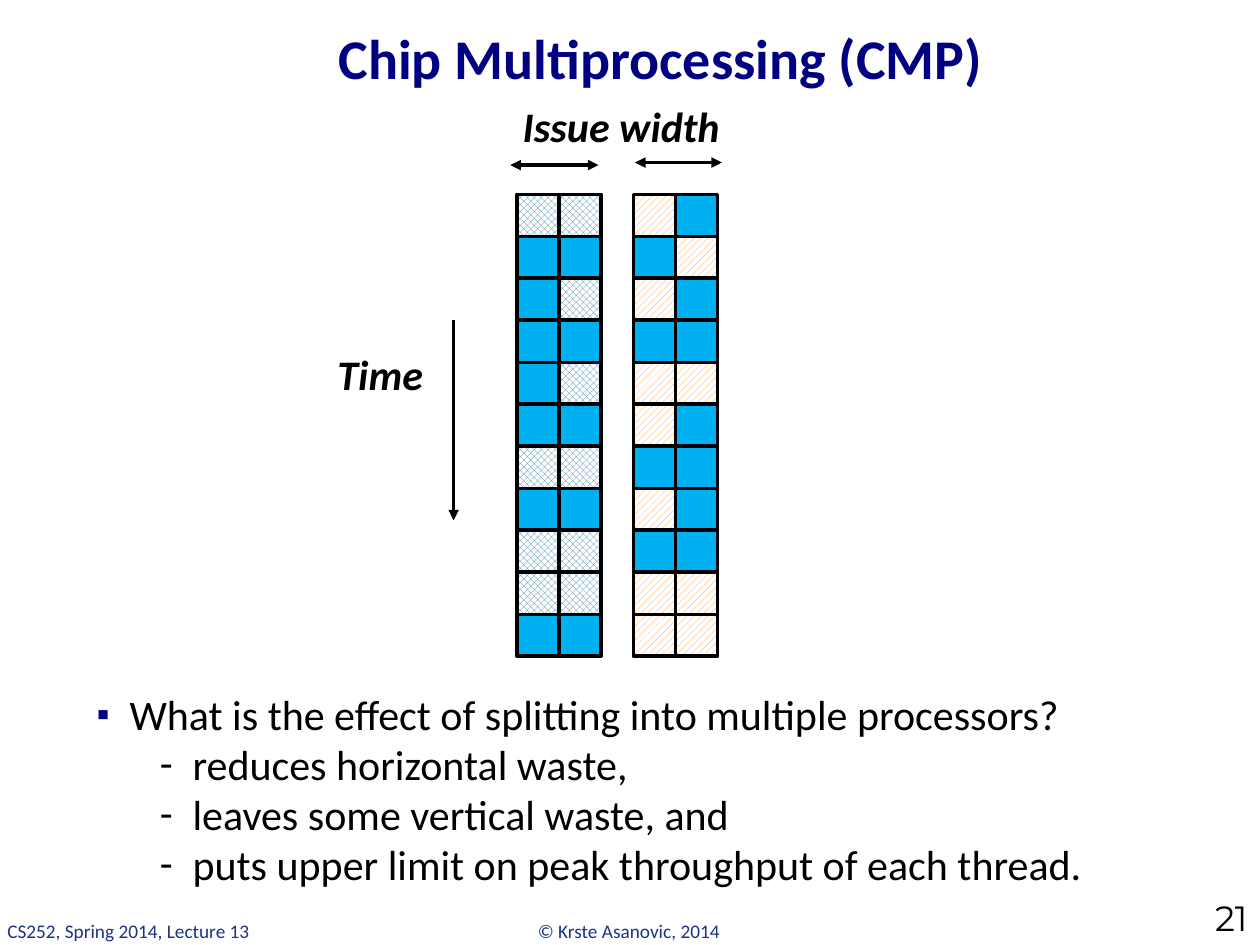
from dataclasses import dataclass

import lxml.etree
import pptx
import pptx.dml.color
import pptx.enum.dml
import pptx.enum.shapes
import pptx.enum.text
import pptx.oxml.ns
import pptx.util

"""Build the chip multiprocessing slide, with positions as percentages of the slide."""

WIDTH, HEIGHT = pptx.util.Inches(10), pptx.util.Inches(7.5)
CELL = pptx.util.Inches(1 / 3)
COLORS = {"title": "000081", "bullet": "000080", "footer": "1B3384", "ink": "000000",
          "busy": "00B0F0", "first": "2C7C9F", "second": "FF9933", "paper": "FFFFFF"}
ALIGN = pptx.enum.text.PP_ALIGN
ANCHOR = pptx.enum.text.MSO_ANCHOR
PATTERN = pptx.enum.dml.MSO_PATTERN


@dataclass
class Box:
    left: float
    top: float
    width: float
    height: float


@dataclass
class Style:
    size: float
    color: str = "ink"
    font: str = "Calibri"
    bold: bool = False
    italic: bool = False


@dataclass
class Label:
    text: str
    box: Box
    style: Style
    align: ALIGN = ALIGN.LEFT
    anchor: ANCHOR = ANCHOR.TOP
    wrap: bool = True


@dataclass
class Core:
    left: float
    top: float
    idle_color: str
    idle_pattern: PATTERN
    rows: str


@dataclass
class Arrow:
    start: tuple[float, float]
    end: tuple[float, float]
    ends: tuple[str, ...]


@dataclass
class Bullet:
    text: str
    indent: float
    level: int = 0
    mark: str = "-"
    color: str = "ink"
    size: int = 100


FOOTER = Style(11, "footer")
CAPTION = Style(24, bold=True, italic=True)
BODY = Style(24)
TITLE = Label("Chip Multiprocessing (CMP)", Box(13.3, 1.07, 78.3, 10),
              Style(32, "title", bold=True), ALIGN.CENTER, ANCHOR.MIDDLE)
LABELS = [
    Label("© Krste Asanovic, 2014", Box(41.7, 96.67, 16.7, 3.87), FOOTER, wrap=False),
    Label("CS252, Spring 2014, Lecture 13", Box(-0.4, 96.67, 21.4, 3.87), FOOTER, wrap=False),
    Label("21", Box(90.8, 96.53, 9.2, 3.47), Style(20, font="Montserrat"),
          ALIGN.RIGHT, ANCHOR.BOTTOM),
    Label("Issue width", Box(40.5, 10, 19.5, 6.67), CAPTION),
    Label("Time", Box(25.8, 36.27, 9.7, 6.67), CAPTION, wrap=False),
]
CORES = [
    Core(41.03, 20.56, "first", PATTERN.SOLID_DIAMOND, ".. ## #. ## #. ## .. ## .. .. ##"),
    Core(50.28, 20.56, "second", PATTERN.WIDE_UPWARD_DIAGONAL,
         ".# #. .# ## .. .# ## .# ## .. .."),
]
ARROWS = [
    Arrow((40.5, 17.47), (47.5, 17.47), ("headEnd", "tailEnd")),
    Arrow((50.4, 17.2), (57.3, 17.2), ("headEnd", "tailEnd")),
    Arrow((36, 33.87), (36, 55.07), ("tailEnd",)),
]
BODY_BOX = Box(6.7, 72.27, 85.8, 18.8)
BULLETS = [
    Bullet("What is the effect of splitting into multiple processors?", 0.26,
           mark="▪", color="bullet", size=85),
    Bullet("reduces horizontal waste,", 0.76, 1),
    Bullet("leaves some vertical waste, and", 0.76, 1),
    Bullet("puts upper limit on peak throughput of each thread.", 0.76, 1),
]


def rgb(name: str) -> pptx.dml.color.RGBColor:
    return pptx.dml.color.RGBColor.from_string(COLORS[name])


def across(share: float) -> int:
    return round(WIDTH * share / 100)


def down(share: float) -> int:
    return round(HEIGHT * share / 100)


def place(box: Box) -> tuple[int, int, int, int]:
    return across(box.left), down(box.top), across(box.width), down(box.height)


def add_child(parent, tag: str, **attributes: str):
    return lxml.etree.SubElement(parent, pptx.oxml.ns.qn(f"a:{tag}"), attributes)


def format_runs(paragraph, style: Style) -> None:
    for run in paragraph.runs:
        run.font.size = pptx.util.Pt(style.size)
        run.font.name = style.font
        run.font.bold = style.bold
        run.font.italic = style.italic
        run.font.color.rgb = rgb(style.color)


def write_label(shape, label: Label) -> None:
    frame = shape.text_frame
    frame.text = label.text
    frame.word_wrap = label.wrap
    frame.auto_size = pptx.enum.text.MSO_AUTO_SIZE.NONE
    frame.vertical_anchor = label.anchor
    frame.paragraphs[0].alignment = label.align
    format_runs(frame.paragraphs[0], label.style)


def write_title(slide, label: Label) -> None:
    title = slide.shapes.title
    title.left, title.top, title.width, title.height = place(label.box)
    write_label(title, label)


def draw_core(slide, core: Core) -> None:
    for row, slots in enumerate(core.rows.split()):
        for column, slot in enumerate(slots):
            cell = slide.shapes.add_shape(
                pptx.enum.shapes.MSO_SHAPE.RECTANGLE, across(core.left) + column * CELL,
                down(core.top) + row * CELL, CELL, CELL)
            cell.shadow.inherit = False
            cell.line.color.rgb = rgb("ink")
            cell.line.width = pptx.util.Pt(2)
            if slot == "#":
                cell.fill.solid()
                cell.fill.fore_color.rgb = rgb("busy")
            else:
                cell.fill.patterned()
                cell.fill.pattern = core.idle_pattern
                cell.fill.fore_color.rgb = rgb(core.idle_color)
                cell.fill.back_color.rgb = rgb("paper")


def draw_arrow(slide, arrow: Arrow) -> None:
    (x1, y1), (x2, y2) = arrow.start, arrow.end
    connector = slide.shapes.add_connector(
        pptx.enum.shapes.MSO_CONNECTOR.STRAIGHT, across(x1), down(y1), across(x2), down(y2))
    connector.line.color.rgb = rgb("ink")
    connector.line.width = pptx.util.Pt(2)
    for end in arrow.ends:
        add_child(connector.line._get_or_add_ln(), end, type="triangle")
    add_child(connector._element.spPr, "effectLst")


def write_bullets(slide, box: Box, bullets: list[Bullet]) -> None:
    frame = slide.shapes.add_textbox(*place(box)).text_frame
    frame.word_wrap = True
    frame.text = "\n".join(bullet.text for bullet in bullets)
    for paragraph, bullet in zip(frame.paragraphs, bullets):
        paragraph.level = bullet.level
        paragraph.line_spacing = pptx.util.Pt(28.6)
        format_runs(paragraph, BODY)
        properties = paragraph._p.get_or_add_pPr()
        properties.set("marL", str(pptx.util.Inches(bullet.indent)))
        properties.set("indent", str(-pptx.util.Inches(0.26)))
        add_child(add_child(properties, "buClr"), "srgbClr", val=COLORS[bullet.color])
        add_child(properties, "buSzPct", val=str(bullet.size * 1000))
        add_child(properties, "buFont", typeface=BODY.font)
        add_child(properties, "buChar", char=bullet.mark)


def main() -> None:
    presentation = pptx.Presentation()
    presentation.slide_width, presentation.slide_height = WIDTH, HEIGHT
    slide = presentation.slides.add_slide(presentation.slide_layouts.get_by_name("Title Only"))
    write_title(slide, TITLE)
    for label in LABELS:
        write_label(slide.shapes.add_textbox(*place(label.box)), label)
    write_bullets(slide, BODY_BOX, BULLETS)
    for core in CORES:
        draw_core(slide, core)
    for arrow in ARROWS:
        draw_arrow(slide, arrow)
    presentation.save("out.pptx")


if __name__ == "__main__":
    main()
